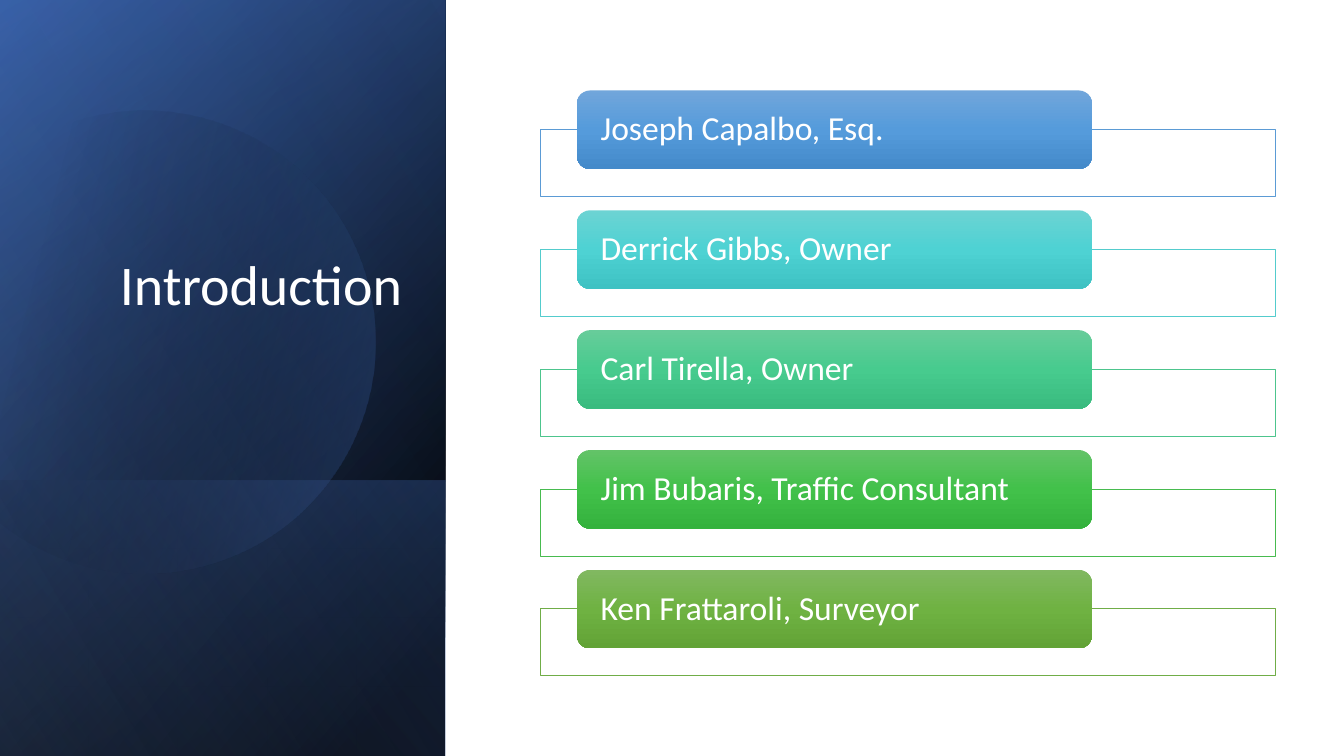
from math import cos, radians, sin, tan

from lxml.etree import SubElement
from pptx import Presentation
from pptx.dml.color import RGBColor
from pptx.enum.shapes import MSO_SHAPE
from pptx.enum.text import MSO_ANCHOR, MSO_AUTO_SIZE, PP_ALIGN
from pptx.oxml.ns import qn
from pptx.util import Cm, Pt

FONT = "Calibri"
WHITE = RGBColor(0xFF, 0xFF, 0xFF)
BLACK = RGBColor(0x00, 0x00, 0x00)
NAVY = RGBColor(0x2F, 0x55, 0x97)
BLUE = RGBColor(0x44, 0x72, 0xC4)
PALE_BLUE = RGBColor(0x8F, 0xAA, 0xDC)

# Each person: text, outline colour, gradient colours from top to bottom
PEOPLE = [
    ("Joseph Capalbo, Esq.", RGBColor(0x5B, 0x9B, 0xD5),
     (RGBColor(0x71, 0xA6, 0xDB), RGBColor(0x55, 0x9B, 0xDB), RGBColor(0x44, 0x8A, 0xCA))),
    ("Derrick Gibbs, Owner", RGBColor(0x54, 0xCC, 0xCD),
     (RGBColor(0x6C, 0xD3, 0xD3), RGBColor(0x4E, 0xD2, 0xD3), RGBColor(0x3E, 0xC2, 0xC3))),
    ("Carl Tirella, Owner", RGBColor(0x4D, 0xC5, 0x8D),
     (RGBColor(0x67, 0xCC, 0x9A), RGBColor(0x47, 0xCB, 0x8E), RGBColor(0x39, 0xBB, 0x7F))),
    ("Jim Bubaris, Traffic Consultant", RGBColor(0x48, 0xBB, 0x4F),
     (RGBColor(0x63, 0xC3, 0x68), RGBColor(0x42, 0xC1, 0x4A), RGBColor(0x34, 0xB2, 0x3D))),
    ("Ken Frattaroli, Surveyor", RGBColor(0x70, 0xAD, 0x47),
     (RGBColor(0x81, 0xB8, 0x61), RGBColor(0x6F, 0xB2, 0x42), RGBColor(0x62, 0xA3, 0x36))),
]


def fill_gradient(shape, stops, angle):
    """Fill with (position, colour, opacity) stops in percent; no line or shadow."""
    shape.shadow.inherit = False
    shape.line.fill.background()
    shape.fill.gradient()
    gradient = shape.element.spPr.find(qn("a:gradFill"))
    stop_list = gradient.find(qn("a:gsLst"))
    for stop in list(stop_list):
        stop_list.remove(stop)
    for position, colour, opacity in stops:
        stop = SubElement(stop_list, qn("a:gs"), pos=str(position * 1000))
        color = SubElement(stop, qn("a:srgbClr"), val=str(colour))
        if opacity < 100:
            SubElement(color, qn("a:alpha"), val=str(opacity * 1000))
    gradient.find(qn("a:lin")).set("ang", str(angle * 60000))


def add_run(paragraph, text, size):
    paragraph.line_spacing = 0.9
    run = paragraph.add_run()
    run.text = text
    run.font.name = FONT
    run.font.size = Pt(size)
    run.font.color.rgb = WHITE


def add_turned_layer(slide, left, top, width, height, stops, angle):
    """Rectangle that is mirrored and turned by 90 degrees to cover the box."""
    shape = slide.shapes.add_shape(
        MSO_SHAPE.RECTANGLE, left + (width - height) // 2,
        top + (height - width) // 2, height, width)
    shape.element.spPr.get_or_add_xfrm().set("flipH", "1")
    shape.rotation = 90
    fill_gradient(shape, stops, angle)


def add_cut_disc(slide, center_x, center_y, radius):
    """Disc with a flat left side, tilted so that the flat side stands upright."""
    def rim_point(degree, tangent=0.0):
        angle = radians(degree)
        return (center_x + int(radius * (cos(angle) - tangent * sin(angle))),
                center_y + int(radius * (sin(angle) + tangent * cos(angle))))

    # Two control points and an end point for each arc
    stations = (-117, -90, 0, 90, 149)
    points = []
    for start, end in zip(stations, stations[1:]):
        handle = 4 / 3 * tan(radians(end - start) / 4)
        points += [rim_point(start, handle), rim_point(end, -handle), rim_point(end)]
    builder = slide.shapes.build_freeform(*rim_point(stations[0]), scale=1.0)
    builder.add_line_segments(points, close=True)
    disc = builder.convert_to_shape()

    # Turn each three line segments into one curve
    segments = list(disc.element.spPr.iter(qn("a:lnTo")))
    for first in range(0, len(segments), 3):
        curve = SubElement(segments[first].getparent(), qn("a:cubicBezTo"))
        segments[first].addprevious(curve)
        for segment in segments[first:first + 3]:
            curve.append(segment[0])
            segment.getparent().remove(segment)
    disc.rotation = 343.9
    fill_gradient(disc, [(29, BLACK, 0), (100, BLUE, 43)], 30)


def add_title_panel(slide, left, top, width, height):
    # Layered background
    panel = (left, top, width, height)
    add_turned_layer(slide, *panel, [(8, BLACK, 100), (100, NAVY, 100)], 50)
    add_turned_layer(slide, *panel, [(0, BLACK, 0), (99, BLUE, 46)], 30)
    band_height = Cm(6.95)
    add_turned_layer(slide, left, top + height - band_height, width, band_height,
                     [(2, BLUE, 29), (100, BLACK, 30)], 130)
    add_cut_disc(slide, left + Cm(3.62), top + Cm(8.5), Cm(5.83))
    add_turned_layer(slide, *panel, [(0, BLACK, 0), (99, PALE_BLUE, 11)], 120)

    # Title, brought in front of the layers
    title = slide.shapes.title
    title.left, title.top = left + Cm(1.73), top + Cm(4.06)
    title.width, title.height = Cm(8.66), Cm(5.77)
    slide.shapes.element.append(title.element)
    frame = title.text_frame
    frame.word_wrap = True
    frame.auto_size = MSO_AUTO_SIZE.NONE
    frame.vertical_anchor = MSO_ANCHOR.BOTTOM
    frame.margin_bottom = Cm(1.83)
    frame.paragraphs[0].alignment = PP_ALIGN.RIGHT
    add_run(frame.paragraphs[0], "Introduction", 40)


def add_person(shapes, left, top, width, text, line_color, colors):
    # Outlined bar
    bar = shapes.add_shape(MSO_SHAPE.RECTANGLE, left, top + Cm(0.98), width, Cm(1.69))
    bar.shadow.inherit = False
    bar.fill.solid()
    bar.fill.fore_color.rgb = WHITE
    bar.line.color.rgb = line_color
    bar.line.width = Pt(0.5)

    # Rounded name tag
    tag = shapes.add_shape(MSO_SHAPE.ROUNDED_RECTANGLE, left + Cm(0.93), top,
                           Cm(12.98), Cm(1.98))
    fill_gradient(tag, [(position, color, 100)
                        for position, color in zip((0, 50, 100), colors)], 90)
    frame = tag.text_frame
    frame.word_wrap = True
    frame.vertical_anchor = MSO_ANCHOR.MIDDLE
    frame.margin_left = frame.margin_right = Cm(0.5)
    frame.margin_top = frame.margin_bottom = 0
    frame.paragraphs[0].alignment = PP_ALIGN.LEFT
    add_run(frame.paragraphs[0], text, 24)


def add_people_list(slide, left, top, width, pitch):
    group = slide.shapes.add_group_shape()
    for index, person in enumerate(PEOPLE):
        add_person(group.shapes, left, top + index * pitch, width, *person)


def main():
    presentation = Presentation()
    presentation.slide_width = Cm(33.87)
    presentation.slide_height = Cm(19.05)
    slide = presentation.slides.add_slide(presentation.slide_layouts[5])
    add_title_panel(slide, 0, 0, Cm(11.22), presentation.slide_height)
    add_people_list(slide, Cm(13.61), Cm(2.28), Cm(18.52), Cm(3.02))
    presentation.save("out.pptx")


if __name__ == "__main__":
    main()
